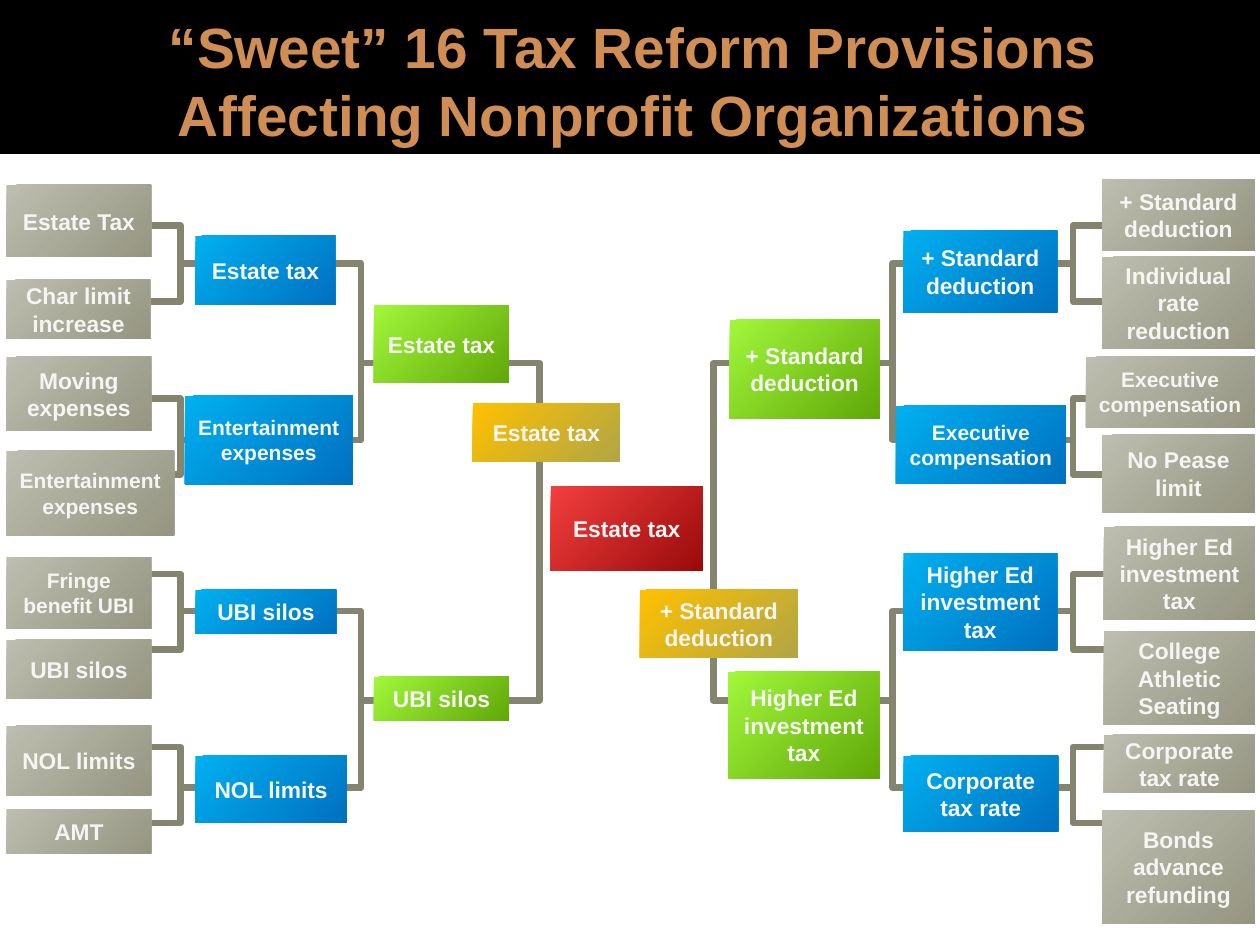
from lxml.etree import SubElement
from pptx import Presentation
from pptx.dml.color import RGBColor
from pptx.enum.shapes import MSO_SHAPE
from pptx.enum.text import MSO_ANCHOR, PP_ALIGN
from pptx.oxml.ns import qn
from pptx.util import Cm, Pt

COLORS = {
    "banner": "000000",
    "white": "FFFFFF",
    "title": "D18E54",
    "text": "F5F5F3",
    "bracket": "85856F",
}
ROUNDS = {
    "sixteen": ("BEBEB0", "959582"),
    "eight": ("00B0F0", "0070C0"),
    "four": ("A2F73B", "60A808"),
    "final": ("FFC000", "B1A645"),
    "winner": ("F33F3F", "9A0A0A"),
}
SMALL_LABELS = {"Entertainment expenses", "Executive compensation", "Fringe benefit UBI"}

BOXES = {
    "sixteen": [
        ("Estate Tax", 0.13, 3.73, 2.92, 1.45),
        ("Char limit increase", 0.13, 5.64, 2.9, 1.19),
        ("Moving expenses", 0.13, 7.19, 2.92, 1.5),
        ("Entertainment expenses", 0.13, 9.09, 3.38, 1.7),
        ("Fringe benefit UBI", 0.13, 11.23, 2.92, 1.45),
        ("UBI silos", 0.13, 12.9, 2.92, 1.19),
        ("NOL limits", 0.13, 14.63, 2.92, 1.4),
        ("AMT", 0.13, 16.31, 2.92, 0.89),
        ("+ Standard deduction", 22.22, 3.61, 3.07, 1.45),
        ("Individual rate reduction", 22.22, 5.18, 3.07, 1.85),
        ("Executive compensation", 21.89, 7.19, 3.4, 1.42),
        ("No Pease limit", 22.22, 8.76, 3.07, 1.57),
        ("Higher Ed investment tax", 22.25, 10.62, 3.05, 1.88),
        ("College Athletic Seating", 22.25, 12.73, 3.05, 1.88),
        ("Corporate tax rate", 22.25, 14.81, 3.05, 1.17),
        ("Bonds advance refunding", 22.22, 16.33, 3.07, 2.29),
    ],
    "eight": [
        ("Estate tax", 3.94, 4.75, 2.82, 1.4),
        ("Entertainment expenses", 3.73, 7.98, 3.38, 1.78),
        ("UBI silos", 3.94, 11.89, 2.84, 0.89),
        ("NOL limits", 3.94, 15.24, 3.05, 1.35),
        ("+ Standard deduction", 18.21, 4.65, 3.1, 1.65),
        ("Executive compensation", 18.06, 8.18, 3.43, 1.57),
        ("Higher Ed investment tax", 18.21, 11.15, 3.1, 1.96),
        ("Corporate tax rate", 18.21, 15.24, 3.12, 1.52),
    ],
    "four": [
        ("Estate tax", 7.54, 6.15, 2.72, 1.57),
        ("UBI silos", 7.54, 13.64, 2.72, 0.89),
        ("+ Standard\ndeduction", 14.71, 6.45, 3.02, 1.98),
        ("Higher Ed investment tax", 14.68, 13.54, 3.05, 2.16),
    ],
    "final": [
        ("Estate tax", 9.53, 8.13, 2.97, 1.17),
        ("+ Standard deduction", 12.9, 11.89, 3.18, 1.37),
    ],
    "winner": [("Estate tax", 11.1, 9.8, 3.07, 1.7)],
}

BRACKETS = [
    (2.16, 3.64, 1.53, (4.55, 8.04, 11.57, 15.06)),
    (3.64, 7.28, 3.56, (5.31, 12.32)),
    (7.28, 10.88, 6.8, (7.32,)),
]
MIRROR_SUM = 25.27


def add_rectangle(slide, left, top, width, height):
    shape = slide.shapes.add_shape(
        MSO_SHAPE.RECTANGLE, Cm(left), Cm(top), Cm(width), Cm(height))
    shape.shadow.inherit = False
    shape.line.fill.background()
    return shape


def format_text(shape, text, size, color):
    text_frame = shape.text_frame
    text_frame.text = text
    text_frame.word_wrap = True
    text_frame.vertical_anchor = MSO_ANCHOR.MIDDLE
    for paragraph in text_frame.paragraphs:
        paragraph.alignment = PP_ALIGN.CENTER
        paragraph.font.name = "Arial"
        paragraph.font.size = Pt(size)
        paragraph.font.bold = True
        paragraph.font.color.rgb = RGBColor.from_string(color)


presentation = Presentation()
presentation.slide_width = Cm(25.4)
presentation.slide_height = Cm(19.05)
slide = presentation.slides.add_slide(presentation.slide_layouts[5])

title = slide.shapes.title
title.left, title.top, title.width, title.height = Cm(1.27), Cm(0.43), Cm(22.86), Cm(2.34)
format_text(title, "“Sweet” 16 Tax Reform Provisions\vAffecting Nonprofit Organizations",
            32.4, COLORS["title"])
title.text_frame.margin_left = Cm(0.25)
title.text_frame.margin_right = Cm(0.13)

banner = add_rectangle(slide, 0, 0, 25.4, 3.18)
banner.fill.solid()
banner.fill.fore_color.rgb = RGBColor.from_string(COLORS["banner"])
body = add_rectangle(slide, 0, 3.18, 25.4, 15.8)
body.fill.solid()
body.fill.fore_color.rgb = RGBColor.from_string(COLORS["white"])
body.line.color.rgb = RGBColor.from_string(COLORS["white"])
body.line.width = Pt(3.78)
for backdrop in (banner, body):
    title.element.addprevious(backdrop.element)

for outer, inner, height, tops in BRACKETS:
    for start, end in ((outer, inner), (MIRROR_SUM - outer, MIRROR_SUM - inner)):
        for top in tops:
            bottom = top + height
            builder = slide.shapes.build_freeform(Cm(start), Cm(top))
            builder.add_line_segments(
                [(Cm(end), Cm(top)), (Cm(end), Cm(bottom)), (Cm(start), Cm(bottom))],
                close=False)
            bracket = builder.convert_to_shape()
            bracket.shadow.inherit = False
            bracket.fill.background()
            bracket.line.color.rgb = RGBColor.from_string(COLORS["bracket"])
            bracket.line.width = Pt(3.78)
            SubElement(bracket.line._get_or_add_ln(), qn("a:round"))

for round_name, boxes in BOXES.items():
    for label, left, top, width, height in boxes:
        box = add_rectangle(slide, left, top, width, height)
        box.fill.gradient()
        box.fill.gradient_angle = 315
        for stop, color in zip(box.fill.gradient_stops, ROUNDS[round_name]):
            stop.color.rgb = RGBColor.from_string(color)
        format_text(box, label, 12 if label in SMALL_LABELS else 13, COLORS["text"])

presentation.save("out.pptx")
